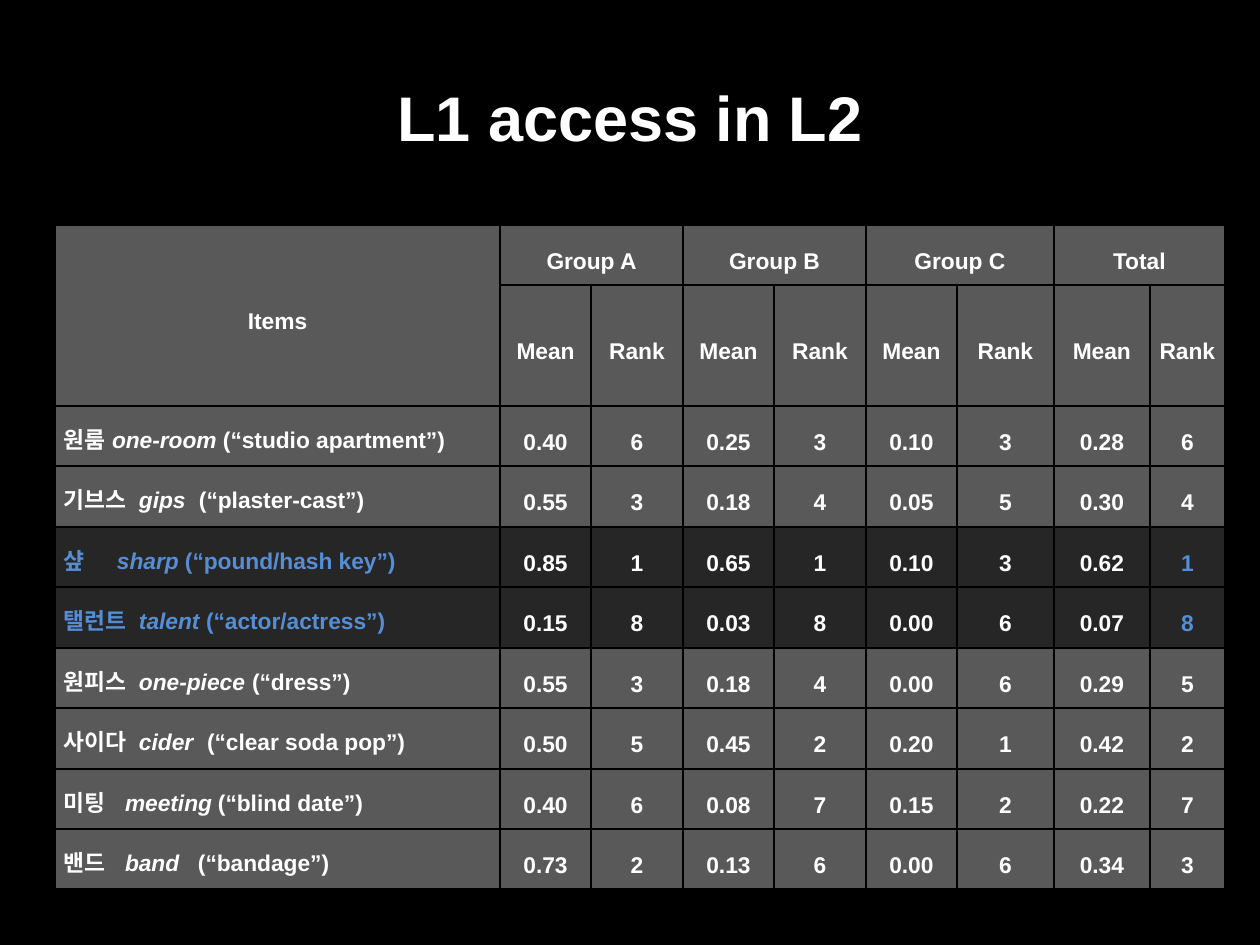
import pptx
import pptx.util
import pptx.dml.color
import pptx.enum.text
import pptx.oxml
import pptx.oxml.ns

UNIT = 914400 / 126
ALIGN = pptx.enum.text.PP_ALIGN
MIDDLE = pptx.enum.text.MSO_ANCHOR.MIDDLE
TOP = pptx.enum.text.MSO_ANCHOR.TOP
WHITE, BLACK, BLUE = "FFFFFF", "000000", "558ED5"
GREY, DARK = "595959", "262626"
NS = pptx.oxml.ns.nsdecls("a")


def color(code):
    return pptx.dml.color.RGBColor.from_string(code)


def write(cell, parts, tone=WHITE, fill=GREY, align=ALIGN.CENTER, anchor=MIDDLE):
    """Fill a cell with (text, italic) parts and return its paragraph."""
    side = round(9 * UNIT)
    look = {"margin_left": side, "margin_right": side, "margin_top": 0,
            "margin_bottom": 0, "vertical_anchor": anchor}
    for name, value in look.items():
        setattr(cell, name, value)
    cell.fill.solid()
    cell.fill.fore_color.rgb = color(fill)
    para = cell.text_frame.paragraphs[0]
    para.alignment = align
    para.line_spacing = 1.5
    for text, slant in parts:
        run = para.add_run()
        run.text = text
        style = {"name": "Arial", "size": pptx.util.Pt(13), "bold": True, "italic": slant}
        for name, value in style.items():
            setattr(run.font, name, value)
        run.font.color.rgb = color(tone)
    return para


deck = pptx.Presentation()
deck.slide_width = round(1260 * UNIT)
deck.slide_height = round(945 * UNIT)
slide = deck.slides.add_slide(deck.slide_layouts[5])
slide.background.fill.solid()
slide.background.fill.fore_color.rgb = color(BLACK)

# Title
title = slide.shapes.title
box = {"left": 63, "top": 38, "width": 1134, "height": 157}
for name, value in box.items():
    setattr(title, name, round(value * UNIT))
title.text_frame.text = "L1 access in L2"
title.text_frame.vertical_anchor = MIDDLE
head = title.text_frame.paragraphs[0]
head.alignment = ALIGN.CENTER
style = {"name": "Arial", "size": pptx.util.Pt(36), "bold": True}
for name, value in style.items():
    setattr(head.runs[0].font, name, value)
head.runs[0].font.color.rgb = color(WHITE)

# Table grid
widths = [445, 91, 92, 91, 92, 91, 97, 96, 75]
heights = [60, 121, 60, 61, 60, 61, 60, 61, 60, 60]
frame = slide.shapes.add_table(
    len(heights), len(widths), round(55 * UNIT), round(225 * UNIT),
    round(sum(widths) * UNIT), round(sum(heights) * UNIT))
table = frame.table
table.first_row = False
table.horz_banding = False
for col, width in zip(table.columns, widths):
    col.width = round(width * UNIT)
for row, height in zip(table.rows, heights):
    row.height = round(height * UNIT)

# Headings
table.cell(0, 0).merge(table.cell(1, 0))
write(table.cell(0, 0), [("Items", False)])
for n, group in enumerate(["Group A", "Group B", "Group C", "Total"]):
    left = 1 + 2 * n
    table.cell(0, left).merge(table.cell(0, left + 1))
    write(table.cell(0, left), [(group, False)])
    write(table.cell(1, left), [("Mean", False)])
    write(table.cell(1, left + 1), [("Rank", False)])

# Word, term, gloss, tab stops of term and gloss, then mean and rank by group
items = [
    ("원룸", "one-room", "studio apartment", (48, 159), "0.40 6 0.25 3 0.10 3 0.28 6"),
    ("기브스", "gips", "plaster-cast", (75, 135), "0.55 3 0.18 4 0.05 5 0.30 4"),
    ("샾", "sharp", "pound/hash key", (53, 121), "0.85 1 0.65 1 0.10 3 0.62 1"),
    ("탤런트", "talent", "actor/actress", (75, 142), "0.15 8 0.03 8 0.00 6 0.07 8"),
    ("원피스", "one-piece", "dress", (75, 188), "0.55 3 0.18 4 0.00 6 0.29 5"),
    ("사이다", "cider", "clear soda pop", (75, 143), "0.50 5 0.45 2 0.20 1 0.42 2"),
    ("미팅", "meeting", "blind date", (61, 154), "0.40 6 0.08 7 0.15 2 0.22 7"),
    ("밴드", "band", "bandage", (61, 134), "0.73 2 0.13 6 0.00 6 0.34 3"),
]
marked = {"sharp", "talent"}
for r, (word, term, gloss, stops, scores) in enumerate(items, 2):
    fill, tone = (DARK, BLUE) if term in marked else (GREY, WHITE)
    parts = [(word + "\t", False), (term, True), (f"\t(“{gloss}”)", False)]
    para = write(table.cell(r, 0), parts, tone, fill, ALIGN.JUSTIFY, TOP)
    tabs = "".join(f'<a:tab pos="{round(x * UNIT)}" algn="l"/>' for x in stops)
    para._p.get_or_add_pPr().append(
        pptx.oxml.parse_xml(f"<a:tabLst {NS}>{tabs}</a:tabLst>"))
    for c, score in enumerate(scores.split(), 1):
        write(table.cell(r, c), [(score, False)], tone if c == 8 else WHITE, fill)

# Borders
for cell in table.iter_cells():
    props = cell._tc.get_or_add_tcPr()
    for n, edge in enumerate(["lnL", "lnR", "lnT", "lnB"]):
        props.insert(n, pptx.oxml.parse_xml(
            f'<a:{edge} {NS} w="12700"><a:solidFill><a:srgbClr val="{BLACK}"/>'
            f"</a:solidFill></a:{edge}>"))

deck.save("out.pptx")
